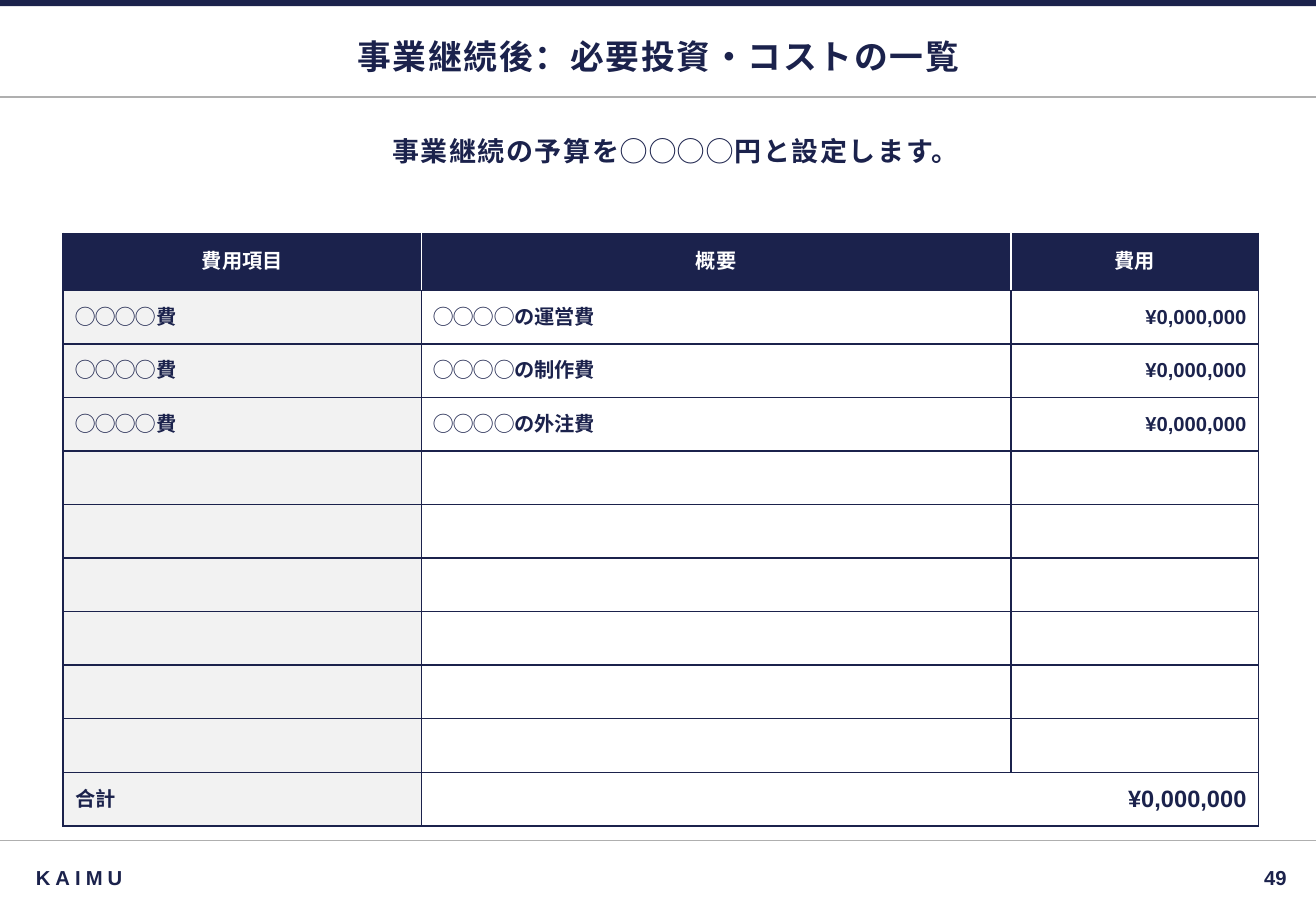
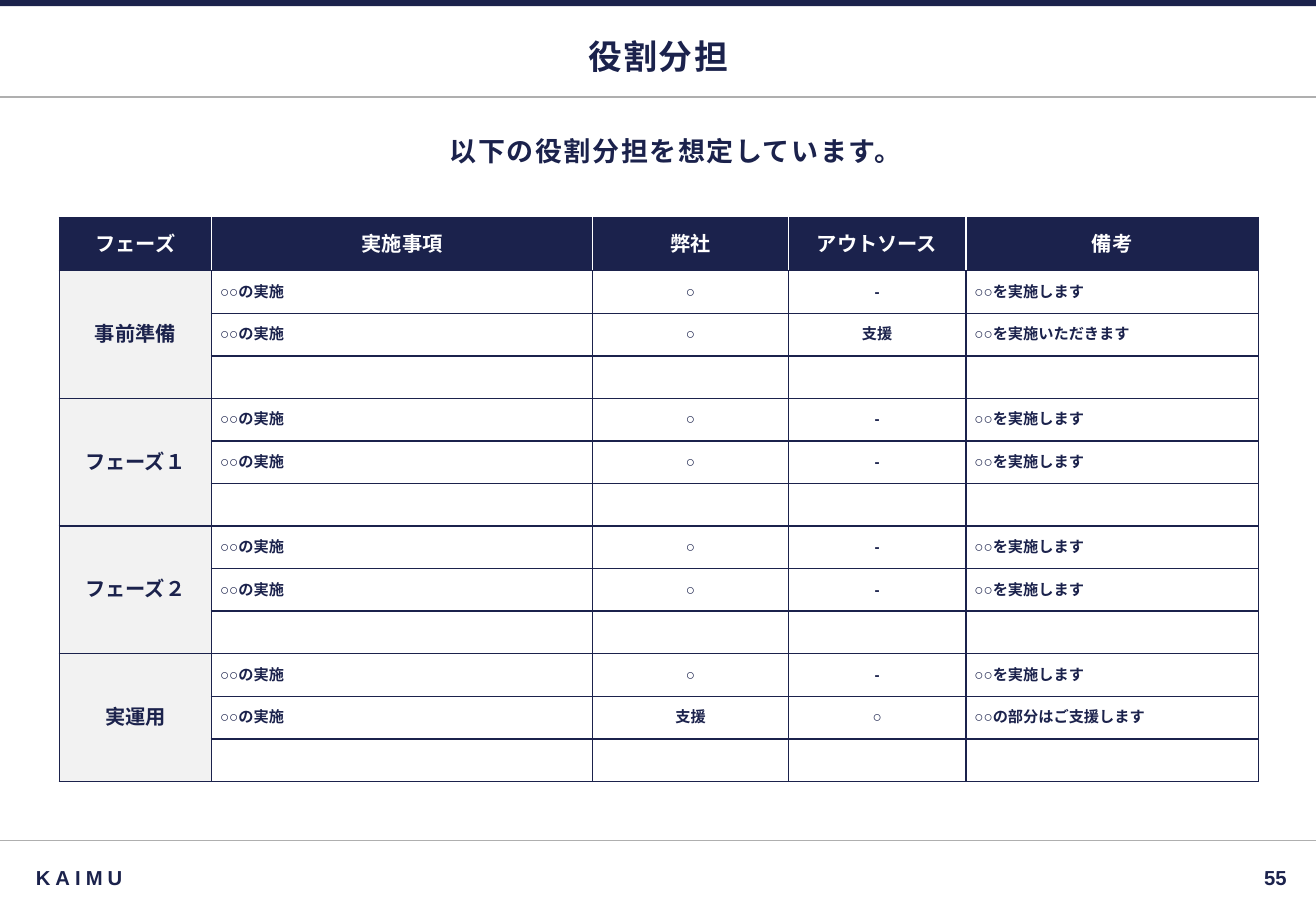
from dataclasses import dataclass

from lxml.etree import SubElement
from pptx import Presentation
from pptx.dml.color import RGBColor
from pptx.enum.shapes import MSO_CONNECTOR, MSO_SHAPE
from pptx.enum.text import MSO_ANCHOR, MSO_AUTO_SIZE, PP_ALIGN
from pptx.oxml.ns import qn
from pptx.util import Cm, Pt

NAVY, WHITE, PALE, RULE = "1B224C", "FFFFFF", "F2F2F2", "AFAFAF"
BODY_FONT, TITLE_FONT = "Arial", "Noto Sans CJK JP"
LEFT, CENTER, RIGHT = PP_ALIGN.LEFT, PP_ALIGN.CENTER, PP_ALIGN.RIGHT
SLIDE_W, SLIDE_H = 27.51, 19.05
COMPANY = "KAIMU"
TITLE_ONLY = 5


@dataclass(frozen=True)
class Style:
    size: float = 12
    align: PP_ALIGN = LEFT
    color: str = NAVY
    font: str = BODY_FONT
    spacing: float = 0


@dataclass(frozen=True)
class Box:
    left: float
    top: float
    width: float
    height: float

    def lengths(self) -> tuple[Cm, Cm, Cm, Cm]:
        return Cm(self.left), Cm(self.top), Cm(self.width), Cm(self.height)


@dataclass(frozen=True)
class Column:
    header: str
    width: float
    style: Style


@dataclass(frozen=True)
class TableSpec:
    left: float
    top: float
    header_height: float
    row_height: float
    margin: float
    columns: list[Column]


TITLE_STYLE = Style(20, CENTER, font=TITLE_FONT, spacing=1)
LEAD_STYLE = Style(16, CENTER, spacing=1)
HEADER_STYLE = Style(12, CENTER, WHITE)
ITEM, MARK = Style(9), Style(9, CENTER)

COST_TABLE = TableSpec(1.32, 4.88, 1.19, 1.12, 0.25, [
    Column("費用項目", 7.49, Style()),
    Column("概要", 12.32, Style()),
    Column("費用", 5.18, Style(align=RIGHT)),
])
COST_ROWS = [
    ["◯◯◯◯費", f"◯◯◯◯の{kind}費", "¥0,000,000"] for kind in ("運営", "制作", "外注")
] + [["", "", ""]] * 6 + [["合計", "", ""]]

ROLE_TABLE = TableSpec(1.24, 4.55, 1.11, 0.89, 0.18, [
    Column("フェーズ", 3.18, Style(12, CENTER)),
    Column("実施事項", 7.97, ITEM),
    Column("弊社", 4.09, MARK),
    Column("アウトソース", 3.71, MARK),
    Column("備考", 6.12, ITEM),
])
TASK = "○○の実施"
DONE_BY_US = [TASK, "○", "-", "○○を実施します"]
PHASES = {
    "事前準備": [DONE_BY_US, [TASK, "○", "支援", "○○を実施いただきます"]],
    "フェーズ１": [DONE_BY_US, DONE_BY_US],
    "フェーズ２": [DONE_BY_US, DONE_BY_US],
    "実運用": [DONE_BY_US, [TASK, "支援", "○", "○○の部分はご支援します"]],
}
PHASE_ROWS = 3


def rgb(value: str) -> RGBColor:
    return RGBColor.from_string(value)


def write(tf, text: str, style: Style):
    """Set one styled paragraph; an empty one keeps its size for the row height."""
    p = tf.paragraphs[0]
    p.text = text
    p.alignment = style.align
    for r in p.runs:
        r.font.size, r.font.bold, r.font.name = Pt(style.size), True, style.font
        r.font.color.rgb = rgb(style.color)
        rPr = r.font._element
        SubElement(rPr, qn("a:ea")).set("typeface", style.font)
        if style.spacing:
            rPr.set("spc", str(int(style.spacing * 100)))
    if not text:
        for old in p._p.findall(qn("a:endParaRPr")):
            p._p.remove(old)
        SubElement(p._p, qn("a:endParaRPr")).set("sz", str(int(style.size * 100)))
    return p


def format_frame(tf, anchor: MSO_ANCHOR, inset: float) -> None:
    tf.word_wrap, tf.auto_size, tf.vertical_anchor = True, MSO_AUTO_SIZE.NONE, anchor
    tf.margin_left = tf.margin_right = tf.margin_top = tf.margin_bottom = Cm(inset)


def add_text(slide, box: Box, text: str, style: Style,
             anchor: MSO_ANCHOR = MSO_ANCHOR.MIDDLE, inset: float = 0.1):
    tf = slide.shapes.add_textbox(*box.lengths()).text_frame
    format_frame(tf, anchor, inset)
    return write(tf, text, style)


def add_rule(slide, y: float) -> None:
    line = slide.shapes.add_connector(
        MSO_CONNECTOR.STRAIGHT, Cm(0), Cm(y), Cm(SLIDE_W), Cm(y))
    line.line.color.rgb, line.line.width = rgb(RULE), Pt(0.75)
    SubElement(line._element.spPr, qn("a:effectLst"))


def add_page(prs, title: str, lead: str, number: int):
    """Add a slide with the shared band, rules, title, lead sentence and footer."""
    slide = prs.slides.add_slide(prs.slide_layouts[TITLE_ONLY])
    for y in (17.58, 2.03):
        add_rule(slide, y)
    band = slide.shapes.add_shape(MSO_SHAPE.RECTANGLE, *Box(0, 0, SLIDE_W, 0.13).lengths())
    band.shadow.inherit = False
    band.fill.solid()
    band.fill.fore_color.rgb = rgb(NAVY)
    band.line.fill.background()

    sp = slide.shapes.title
    sp.left, sp.top, sp.width, sp.height = Box(1.26, 0.53, 25, 1.3).lengths()
    format_frame(sp.text_frame, MSO_ANCHOR.MIDDLE, 0.1)
    write(sp.text_frame, title, TITLE_STYLE)

    p = add_text(slide, Box(1.32, 2.72, 25, 2.11), lead, LEAD_STYLE, MSO_ANCHOR.TOP)
    p.space_after = Pt(6)
    pPr = p._p.get_or_add_pPr()
    pPr.set("marL", str(Cm(1.27)))
    pPr.set("indent", str(-Cm(0.64)))

    add_text(slide, Box(0.5, 17.96, 22, 0.79), COMPANY, Style(spacing=3), inset=0.25)
    add_text(slide, Box(23.01, 17.96, 3.99, 0.79), str(number), Style(align=RIGHT))
    return slide


def set_borders(cell, left: str, right: str) -> None:
    tcPr = cell._tc.get_or_add_tcPr()
    for tag, color in (("lnL", left), ("lnR", right), ("lnT", NAVY), ("lnB", NAVY)):
        ln = SubElement(tcPr, qn(f"a:{tag}"), w=str(Pt(1)))
        fill = SubElement(ln, qn("a:solidFill"))
        SubElement(fill, qn("a:srgbClr"), val=color)


def add_grid(slide, spec: TableSpec, rows: list[list[str]]):
    """Add a table with a navy header row and a pale first column."""
    columns = spec.columns
    box = Box(spec.left, spec.top, sum(c.width for c in columns),
              spec.header_height + spec.row_height * len(rows))
    table = slide.shapes.add_table(len(rows) + 1, len(columns), *box.lengths()).table
    table.first_row = table.horz_banding = False
    for i, column in enumerate(columns):
        table.columns[i].width = Cm(column.width)
    for i, texts in enumerate([[c.header for c in columns], *rows]):
        is_header = i == 0
        table.rows[i].height = Cm(spec.header_height if is_header else spec.row_height)
        for j, text in enumerate(texts):
            cell = table.cell(i, j)
            cell.vertical_anchor = MSO_ANCHOR.MIDDLE
            cell.margin_left = cell.margin_right = Cm(spec.margin)
            cell.margin_top = cell.margin_bottom = Cm(spec.margin)
            set_borders(cell,
                        WHITE if is_header and j > 0 else NAVY,
                        WHITE if is_header and j < len(columns) - 1 else NAVY)
            if is_header or j == 0:
                cell.fill.solid()
                cell.fill.fore_color.rgb = rgb(NAVY if is_header else PALE)
            else:
                cell.fill.background()
            write(cell.text_frame, text, HEADER_STYLE if is_header else columns[j].style)
    return table


def build_costs(prs) -> None:
    slide = add_page(prs, "事業継続後：必要投資・コストの一覧",
                     "事業継続の予算を◯◯◯◯円と設定します。", 49)
    table = add_grid(slide, COST_TABLE, COST_ROWS)
    last = len(COST_ROWS)
    total = table.cell(last, 1)
    total.merge(table.cell(last, 2))
    for old in total.text_frame.paragraphs[0]._p.findall(qn("a:endParaRPr")):
        old.getparent().remove(old)
    write(total.text_frame, "¥0,000,000", Style(14, RIGHT))


def build_roles(prs) -> None:
    slide = add_page(prs, "役割分担", "以下の役割分担を想定しています。", 55)
    rows = []
    for phase, tasks in PHASES.items():
        padded = tasks + [[""] * 4] * (PHASE_ROWS - len(tasks))
        rows += [[phase if i == 0 else "", *task] for i, task in enumerate(padded)]
    table = add_grid(slide, ROLE_TABLE, rows)
    for top in range(1, len(rows) + 1, PHASE_ROWS):
        table.cell(top, 0).merge(table.cell(top + PHASE_ROWS - 1, 0))


def main() -> None:
    prs = Presentation()
    prs.slide_width, prs.slide_height = Cm(SLIDE_W), Cm(SLIDE_H)
    build_costs(prs)
    build_roles(prs)
    prs.save("out.pptx")


if __name__ == "__main__":
    main()
